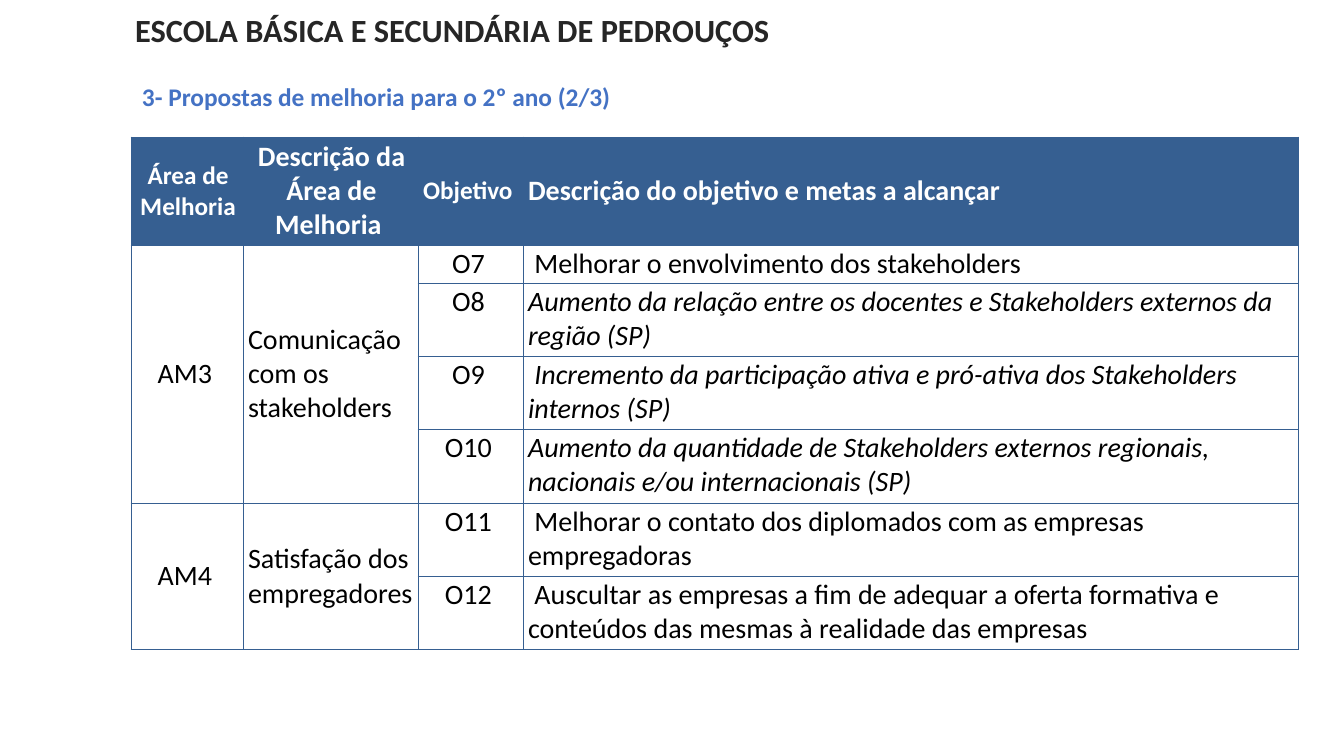
import pptx
import pptx.util
import pptx.dml.color
import pptx.enum.text
import pptx.oxml
import pptx.oxml.ns

PX = 9071  # EMU per px at 100.8 px to the inch
COLORS = {"title": "262626", "subtitle": "4472C4", "table": "365F91",
          "white": "FFFFFF", "black": "000000"}
MIDDLE = pptx.enum.text.MSO_ANCHOR.MIDDLE
TOP = pptx.enum.text.MSO_ANCHOR.TOP
LEFT = pptx.enum.text.PP_ALIGN.LEFT
CENTER = pptx.enum.text.PP_ALIGN.CENTER


def write(frame, text, size, color, bold=False, italic=False, align=LEFT):
    frame.text = text
    frame.word_wrap = True
    para = frame.paragraphs[0]
    para.alignment = align
    for span in para.runs:
        span.font.name = "Calibri"
        span.font.size = pptx.util.Pt(size)
        span.font.bold = bold
        span.font.italic = italic
        span.font.color.rgb = pptx.dml.color.RGBColor.from_string(COLORS[color])


def style_cell(cell, fill, anchor):
    cell.margin_left = 5 * PX
    cell.margin_right = 3 * PX
    cell.margin_top = cell.margin_bottom = 2 * PX
    cell.vertical_anchor = anchor
    properties = cell._tc.get_or_add_tcPr()
    for side in ("lnL", "lnR", "lnT", "lnB"):
        properties.append(pptx.oxml.parse_xml(
            f'<a:{side} {pptx.oxml.ns.nsdecls("a")} w="7620"><a:solidFill>'
            f'<a:srgbClr val="{COLORS["table"]}"/></a:solidFill></a:{side}>'))
    cell.fill.solid()
    cell.fill.fore_color.rgb = pptx.dml.color.RGBColor.from_string(COLORS[fill])


deck = pptx.Presentation()
deck.slide_width = pptx.util.Inches(13.33)
deck.slide_height = pptx.util.Inches(7.5)
page = deck.slides.add_slide(deck.slide_layouts[5])

# School name
title = page.shapes.title
title.left, title.top, title.width, title.height = 125 * PX, 6 * PX, 840 * PX, 48 * PX
write(title.text_frame, "ESCOLA BÁSICA E SECUNDÁRIA DE PEDROUÇOS", 23.1, "title", bold=True)
title.text_frame.vertical_anchor = MIDDLE

# Section heading
heading = page.shapes.add_textbox(132 * PX, 60 * PX, 1147 * PX, 72 * PX)
write(heading.text_frame, "3- Propostas de melhoria para o 2º ano (2/3)", 18.1, "subtitle", bold=True)
heading.text_frame.vertical_anchor = MIDDLE

# Table contents
headers = [("Área de Melhoria", 18, CENTER), ("Descrição da Área de Melhoria ", 20, CENTER),
           ("Objetivo", 18, LEFT), ("Descrição do objetivo e metas a alcançar", 20, LEFT)]
areas = [
    ("AM3 ", "Comunicação com os stakeholders ", [
        ("O7 ", " Melhorar o envolvimento dos stakeholders ", False),
        ("O8 ", "Aumento da relação entre os docentes e Stakeholders externos da região (SP) ", True),
        ("O9 ", " Incremento da participação ativa e pró-ativa dos Stakeholders internos (SP) ", True),
        ("O10 ", "Aumento da quantidade de Stakeholders externos regionais, "
                 "nacionais e/ou internacionais (SP) ", True)]),
    ("AM4 ", "Satisfação dos empregadores ", [
        ("O11 ", " Melhorar o contato dos diplomados com as empresas empregadoras ", False),
        ("O12 ", " Auscultar as empresas a fim de adequar a oferta formativa e "
                 "conteúdos das mesmas à realidade das empresas ", False)]),
]
column_widths = [112, 175, 105, 775]
row_heights = [108, 38, 73, 73, 74, 73, 74]

# Table grid
table = page.shapes.add_table(len(row_heights), len(column_widths), 131 * PX, 137 * PX,
                              sum(column_widths) * PX, sum(row_heights) * PX).table
table.first_row = table.horz_banding = False
for column, width in zip(table.columns, column_widths):
    column.width = width * PX
for row, height in zip(table.rows, row_heights):
    row.height = height * PX
for row_index in range(len(row_heights)):
    for column_index in range(len(column_widths)):
        is_header = row_index == 0
        style_cell(table.cell(row_index, column_index), "table" if is_header else "white",
                   MIDDLE if is_header or column_index < 2 else TOP)

# Header row
for column_index, (text, size, align) in enumerate(headers):
    write(table.cell(0, column_index).text_frame, text, size, "white", bold=True, align=align)

# Improvement areas and their objectives
first = 1
for code, description, objectives in areas:
    last = first + len(objectives) - 1
    for column_index, text, align in ((0, code, CENTER), (1, description, LEFT)):
        cell = table.cell(first, column_index)
        cell.merge(table.cell(last, column_index))
        write(cell.text_frame, text, 20, "black", align=align)
    for row_index, (number, goal, italic) in enumerate(objectives, first):
        write(table.cell(row_index, 2).text_frame, number, 20, "black", align=CENTER)
        write(table.cell(row_index, 3).text_frame, goal, 20, "black", italic=italic)
    first = last + 1

deck.save("out.pptx")
